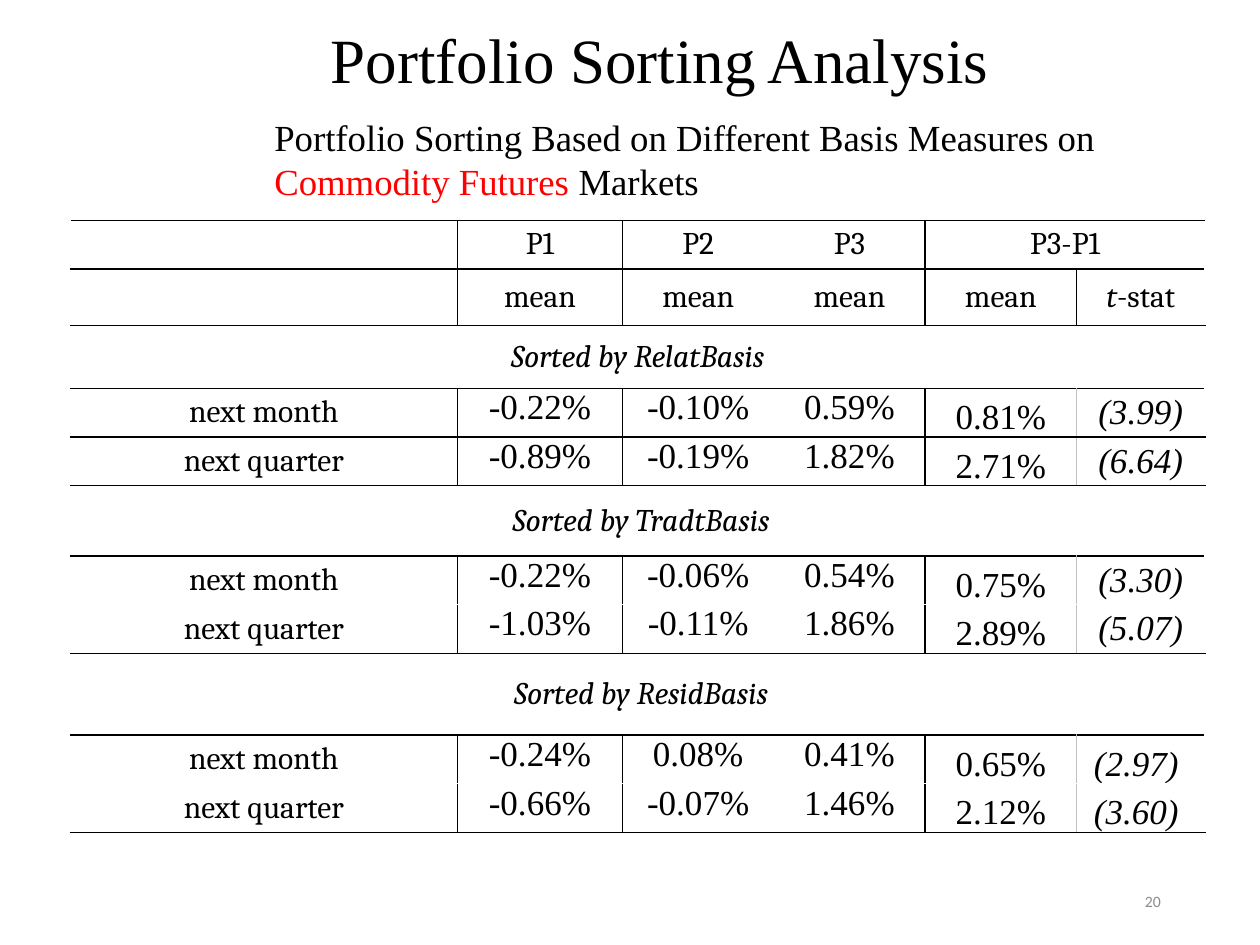
from dataclasses import dataclass

from lxml.etree import SubElement
from pptx import Presentation
from pptx.dml.color import RGBColor
from pptx.enum.text import MSO_ANCHOR, MSO_AUTO_SIZE, PP_ALIGN
from pptx.oxml.ns import qn
from pptx.util import Cm, Pt

BLACK = RGBColor(0, 0, 0)
WHITE = RGBColor(255, 255, 255)
RED = RGBColor(255, 0, 0)
NUMBER_GRAY = RGBColor(140, 140, 140)
RULE_GRAY = RGBColor(193, 193, 193)
SERIF = "Times New Roman"
LABEL_FONT = "Cambria"
NO_STYLE = "{2D5ABB26-0587-4C30-8999-92F81FD0307C}"

COLUMN_WIDTHS = (7.8, 3.33, 3.05, 3.05, 3.05, 2.59)
HEADER_HEIGHTS = (0.98, 1.14)
DATA_HEIGHT = 0.98
LAST_COLUMN = len(COLUMN_WIDTHS) - 1


@dataclass(frozen=True)
class SortBlock:
    heading: str
    heading_height: float
    month: tuple[str, ...]
    quarter: tuple[str, ...]
    divider: RGBColor | None = WHITE
    statistic_anchor: MSO_ANCHOR = MSO_ANCHOR.MIDDLE


BLOCKS = (
    SortBlock("Sorted by RelatBasis", 1.27,
              ("-0.22%", "-0.10%", "0.59%", "0.81%", "(3.99)"),
              ("-0.89%", "-0.19%", "1.82%", "2.71%", "(6.64)"), divider=None),
    SortBlock(" Sorted by TradtBasis", 1.42,
              ("-0.22%", "-0.06%", "0.54%", "0.75%", "(3.30)"),
              ("-1.03%", "-0.11%", "1.86%", "2.89%", "(5.07)")),
    SortBlock(" Sorted by ResidBasis", 1.65,
              ("-0.24%", "0.08%", "0.41%", "0.65%", "(2.97) "),
              ("-0.66%", "-0.07%", "1.46%", "2.12%", "(3.60) "),
              statistic_anchor=MSO_ANCHOR.BOTTOM),
)


def write_text(paragraph, text: str, *, font: str = SERIF, size: float = 20,
               color: RGBColor = BLACK, italic: bool = False,
               align: PP_ALIGN = PP_ALIGN.CENTER) -> None:
    paragraph.alignment = align
    run = paragraph.add_run()
    run.text = text
    run.font.name = font
    run.font.size = Pt(size)
    run.font.italic = italic
    run.font.color.rgb = color


def write_label(cell, text: str, italic: bool = False) -> None:
    write_text(cell.text_frame.paragraphs[0], text, font=LABEL_FONT, size=18, italic=italic)


def format_cell(cell, borders: dict[str, RGBColor | None]) -> None:
    properties = cell._tc.get_or_add_tcPr()
    for side in ("L", "R", "T", "B"):
        color = borders.get(side)
        if color is not None:
            line = SubElement(properties, qn(f"a:ln{side}"), w=str(Pt(1)))
            fill = SubElement(line, qn("a:solidFill"))
            SubElement(fill, qn("a:srgbClr"), val=str(color))
    cell.fill.background()
    cell.margin_left = cell.margin_right = Cm(0.18)
    cell.margin_top = cell.margin_bottom = 0
    cell.vertical_anchor = MSO_ANCHOR.MIDDLE


def format_row(table, row: int, dividers: dict[int, RGBColor],
               top: RGBColor | None = BLACK, bottom: RGBColor | None = BLACK) -> None:
    edges = {-1: WHITE, LAST_COLUMN: WHITE, **dividers}
    for column in range(len(COLUMN_WIDTHS)):
        format_cell(table.cell(row, column), {
            "L": edges.get(column - 1), "R": edges.get(column), "T": top, "B": bottom})


def fill_header(table) -> None:
    for row in range(len(HEADER_HEIGHTS)):
        format_row(table, row, {0: BLACK, 3: BLACK})
    table.cell(0, 4).merge(table.cell(0, LAST_COLUMN))
    for column, label in enumerate(("P1", "P2", "P3", "P3-P1"), start=1):
        write_label(table.cell(0, column), label)
        write_label(table.cell(1, column), "mean")
    write_label(table.cell(1, LAST_COLUMN), "t", italic=True)
    write_label(table.cell(1, LAST_COLUMN), "-stat")


def fill_data_row(table, row: int, label: str, values: tuple[str, ...],
                  statistic_anchor: MSO_ANCHOR) -> None:
    write_label(table.cell(row, 0), label)
    anchors = (MSO_ANCHOR.TOP,) * 3 + (MSO_ANCHOR.BOTTOM, statistic_anchor)
    for column, (value, anchor) in enumerate(zip(values, anchors), start=1):
        cell = table.cell(row, column)
        cell.vertical_anchor = anchor
        write_text(cell.text_frame.paragraphs[0], value, italic=column == LAST_COLUMN)


def fill_block(table, first_row: int, block: SortBlock) -> None:
    format_row(table, first_row, {})
    table.cell(first_row, 0).merge(table.cell(first_row, LAST_COLUMN))
    write_label(table.cell(first_row, 0), block.heading, italic=True)
    dividers = {0: BLACK, 3: BLACK, 4: RULE_GRAY}
    format_row(table, first_row + 1, dividers, bottom=block.divider)
    format_row(table, first_row + 2, dividers, top=block.divider)
    fill_data_row(table, first_row + 1, "next month", block.month, block.statistic_anchor)
    fill_data_row(table, first_row + 2, "next quarter", block.quarter, block.statistic_anchor)


def add_results_table(slide) -> None:
    heights = list(HEADER_HEIGHTS)
    for block in BLOCKS:
        heights += [block.heading_height, DATA_HEIGHT, DATA_HEIGHT]
    frame = slide.shapes.add_table(len(heights), len(COLUMN_WIDTHS), Cm(1.42), Cm(4.44),
                                   Cm(sum(COLUMN_WIDTHS)), Cm(sum(heights)))
    table = frame.table
    table.first_row = table.horz_banding = False
    table._tbl.tblPr.find(qn("a:tableStyleId")).text = NO_STYLE
    for column, width in zip(table.columns, COLUMN_WIDTHS):
        column.width = Cm(width)
    for row, height in zip(table.rows, heights):
        row.height = Cm(height)
    fill_header(table)
    for index, block in enumerate(BLOCKS):
        fill_block(table, len(HEADER_HEIGHTS) + 3 * index, block)


def add_title(slide) -> None:
    title = slide.shapes.title
    title.left, title.top, title.width, title.height = Cm(2.13), Cm(0.38), Cm(22.66), Cm(1.8)
    title.text_frame.auto_size = MSO_AUTO_SIZE.NONE
    title.text_frame.vertical_anchor = MSO_ANCHOR.MIDDLE
    paragraph = title.text_frame.paragraphs[0]
    paragraph.line_spacing = 0.9
    write_text(paragraph, "Portfolio Sorting Analysis ", size=36)


def add_subtitle(slide) -> None:
    text_frame = slide.shapes.add_textbox(Cm(5.28), Cm(2.18), Cm(18.21), Cm(2.06)).text_frame
    text_frame.word_wrap = True
    text_frame.auto_size = MSO_AUTO_SIZE.SHAPE_TO_FIT_TEXT
    for text, color in (
        ("Portfolio Sorting Based on Different Basis Measures on ", BLACK),
        ("Commodity Futures ", RED),
        ("Markets", BLACK),
    ):
        write_text(text_frame.paragraphs[0], text, size=21, color=color, align=PP_ALIGN.LEFT)


def add_slide_number(slide) -> None:
    text_frame = slide.shapes.add_textbox(Cm(17.93), Cm(17.65), Cm(5.72), Cm(1.02)).text_frame
    text_frame.word_wrap = True
    text_frame.vertical_anchor = MSO_ANCHOR.MIDDLE
    write_text(text_frame.paragraphs[0], "20", font="Calibri", size=9,
               color=NUMBER_GRAY, align=PP_ALIGN.RIGHT)


def main() -> None:
    presentation = Presentation()
    presentation.slide_width, presentation.slide_height = Cm(25.4), Cm(19.05)
    slide = presentation.slides.add_slide(presentation.slide_layouts[5])
    add_title(slide)
    add_slide_number(slide)
    add_results_table(slide)
    add_subtitle(slide)
    presentation.save("out.pptx")


if __name__ == "__main__":
    main()
